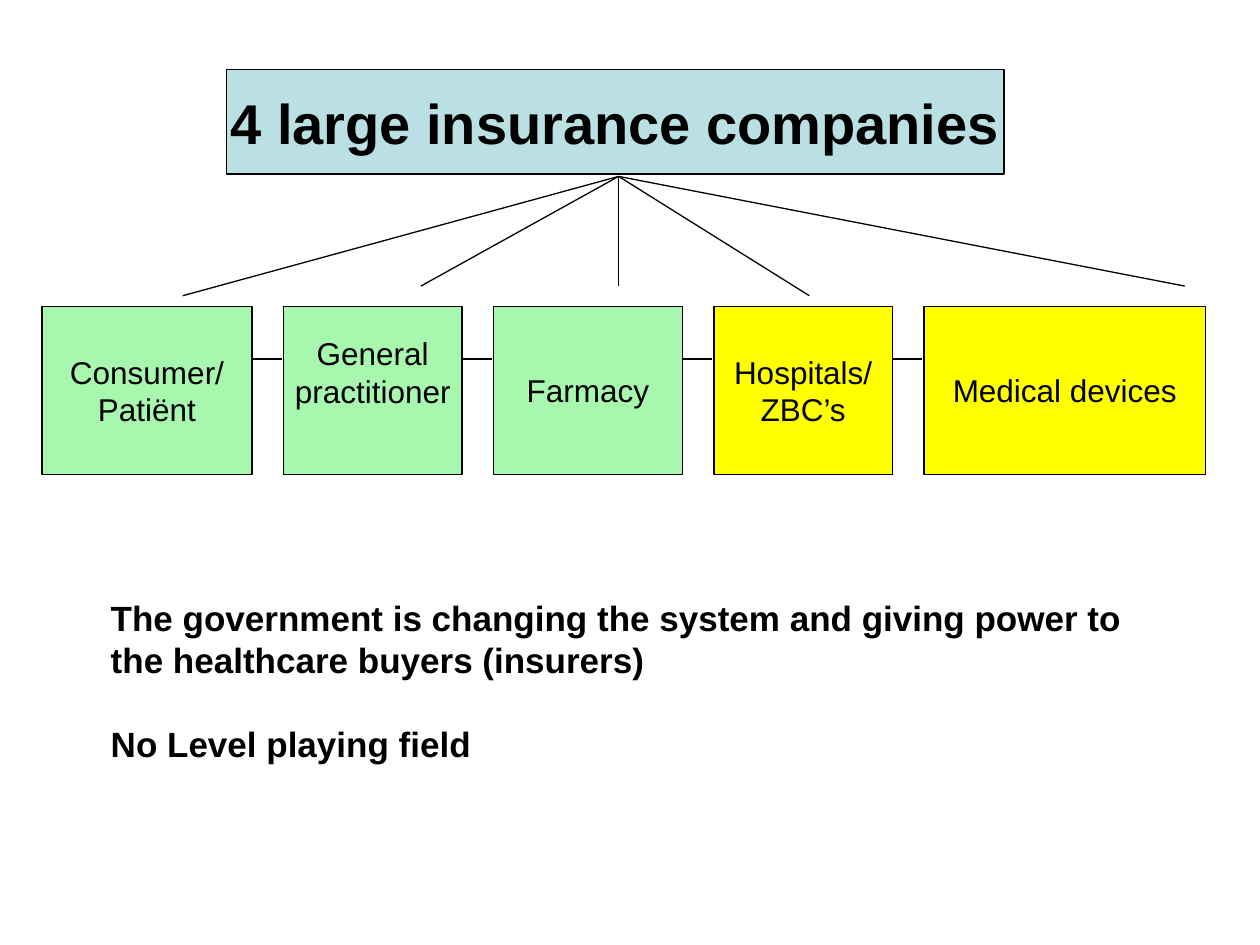
from dataclasses import dataclass

from lxml import etree
from pptx import Presentation
from pptx.dml.color import RGBColor
from pptx.enum import shapes, text
from pptx.oxml import ns
from pptx.util import Pt


@dataclass(frozen=True)
class Theme:
    font: str = "Arial"
    ink: RGBColor = RGBColor(0, 0, 0)
    insurers: RGBColor = RGBColor(0xBB, 0xE0, 0xE3)
    care: RGBColor = RGBColor(0xA7, 0xF7, 0xAF)
    supply: RGBColor = RGBColor(0xFF, 0xFF, 0x00)
    title_size: int = 32
    party_size: int = 18
    message_size: int = 20
    line: float = 0.75


THEME = Theme()
PARTY_TOP, PARTY_HEIGHT, PARTY_GAP = 175, 96, 18
LINK_Y = 205.2
HUB = (353.5, 100.8)
SPOKE_ENDS = [(104.5, 169), (240.5, 163.5), (353.5, 163.5), (462.5, 169), (677, 163.5)]

# label, width, fill, extra bottom inset
PARTIES = [
    ("Consumer/\vPatiënt", 120, THEME.care, 0),
    ("General\vpractitioner", 102, THEME.care, 20.7),
    ("Farmacy", 108, THEME.care, 0),
    ("Hospitals/\vZBC’s", 102, THEME.supply, 0),
    ("Medical devices", 161, THEME.supply, 0),
]
# line, space before
MESSAGE = [
    ("The government is changing the system and giving power to", 0),
    ("the healthcare buyers (insurers)", 0),
    ("No Level playing field", 24),
]


def style_paragraph(paragraph, size, bold, align):
    paragraph.alignment = align
    font = paragraph.font
    font.name, font.size, font.bold = THEME.font, Pt(size), bold
    font.color.rgb = THEME.ink


def format_box(box, label, fill, size, bold=False):
    box.fill.solid()
    box.fill.fore_color.rgb = fill
    box.line.color.rgb = THEME.ink
    box.line.width = Pt(THEME.line)
    frame = box.text_frame
    frame.text = label
    frame.word_wrap = False
    frame.auto_size = text.MSO_AUTO_SIZE.NONE
    frame.vertical_anchor = text.MSO_ANCHOR.MIDDLE
    frame.margin_left = frame.margin_right = Pt(0)
    style_paragraph(frame.paragraphs[0], size, bold, text.PP_ALIGN.CENTER)


def add_title(slide):
    title = slide.shapes.title
    title.left, title.top, title.width, title.height = Pt(129.6), Pt(39.6), Pt(444.2), Pt(59.8)
    format_box(title, "4 large insurance companies", THEME.insurers, THEME.title_size, bold=True)


def add_line(slide, start, end):
    line = slide.shapes.add_connector(
        shapes.MSO_CONNECTOR.STRAIGHT, *(Pt(v) for v in (*start, *end)))
    line.line.color.rgb = THEME.ink
    line.line.width = Pt(THEME.line)
    etree.SubElement(line._element.spPr, ns.qn("a:effectLst"))


def add_parties(slide):
    """Place the boxes left to right, with a link across each gap."""
    left = 24
    for number, (label, width, fill, extra_bottom) in enumerate(PARTIES):
        if number:
            add_line(slide, (left - PARTY_GAP, LINK_Y), (left - 1, LINK_Y))
        party = slide.shapes.add_shape(
            shapes.MSO_SHAPE.RECTANGLE, Pt(left), Pt(PARTY_TOP), Pt(width), Pt(PARTY_HEIGHT))
        party.shadow.inherit = False
        format_box(party, label, fill, THEME.party_size)
        party.text_frame.margin_bottom = Pt(3.6 + extra_bottom)
        left += width + PARTY_GAP


def add_message(slide):
    message = slide.shapes.add_textbox(Pt(56.2), Pt(337.2), Pt(596), Pt(104.4))
    frame = message.text_frame
    frame.word_wrap = False
    frame.auto_size = text.MSO_AUTO_SIZE.SHAPE_TO_FIT_TEXT
    frame.text = "\n".join(line for line, _ in MESSAGE)
    for paragraph, (_, space_before) in zip(frame.paragraphs, MESSAGE):
        style_paragraph(paragraph, THEME.message_size, True, text.PP_ALIGN.LEFT)
        paragraph.space_before = Pt(space_before)


def main():
    deck = Presentation()
    deck.slide_width, deck.slide_height = Pt(720), Pt(540)
    slide = deck.slides.add_slide(deck.slide_layouts.get_by_name("Title Only"))
    add_title(slide)
    add_parties(slide)
    for end in SPOKE_ENDS:
        add_line(slide, HUB, end)
    add_message(slide)
    deck.save("out.pptx")


if __name__ == "__main__":
    main()
